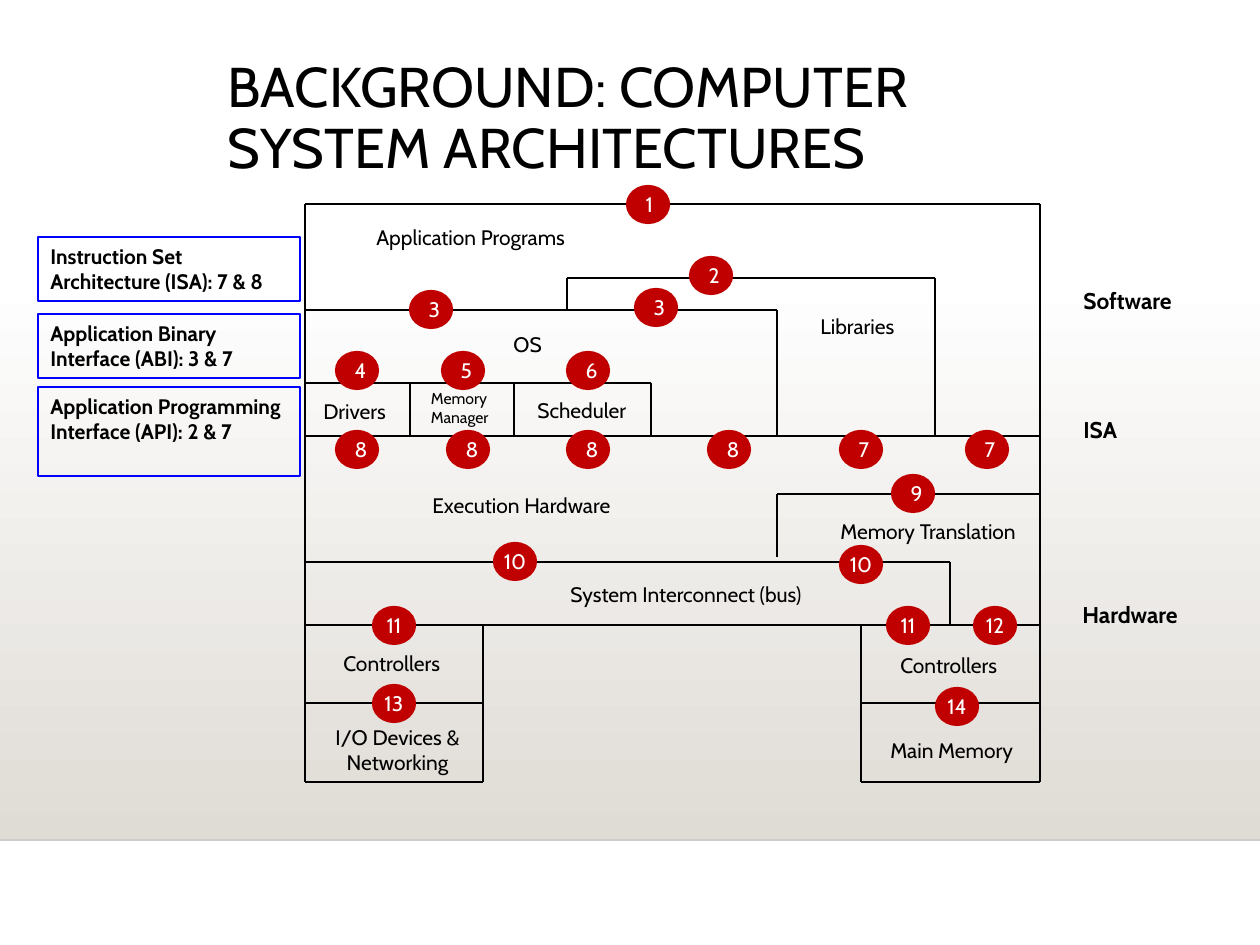
from lxml import etree
from pptx import Presentation
from pptx.dml.color import RGBColor
from pptx.enum.shapes import MSO_CONNECTOR as CONNECTOR, MSO_SHAPE as SHAPE
from pptx.enum.text import MSO_ANCHOR as ANCHOR, PP_ALIGN as ALIGN
from pptx.oxml.ns import qn
from pptx.util import Pt

SCALE = 914400 / 126
COLORS = {
    "black": "000000",
    "white": "FFFFFF",
    "sand": "DFDBD5",
    "floor": "CCCCCC",
    "red": "C00000",
    "blue": "0000FF",
}


def write(shape, text, size, color="black", bold=False, align=ALIGN.LEFT,
          anchor=ANCHOR.TOP, wrap=True):
    text_frame = shape.text_frame
    text_frame.text = text
    text_frame.word_wrap = wrap
    text_frame.vertical_anchor = anchor
    for paragraph in text_frame.paragraphs:
        paragraph.alignment = align
        for run in paragraph.runs:
            run.font.name = "Cabin"
            run.font.size = Pt(size)
            run.font.bold = bold
            run.font.color.rgb = RGBColor.from_string(COLORS[color])
    return text_frame


def draw_line(points, color="black", width=0.75):
    connector = slide.shapes.add_connector(
        CONNECTOR.STRAIGHT, *[round(value * SCALE) for value in points])
    connector.line.color.rgb = RGBColor.from_string(COLORS[color])
    connector.line.width = Pt(width)
    etree.SubElement(connector._element.spPr, qn("a:effectLst"))


presentation = Presentation()
presentation.slide_width = round(1260 * SCALE)
presentation.slide_height = round(945 * SCALE)
slide = presentation.slides.add_slide(presentation.slide_layouts[6])

backdrop = slide.shapes.add_shape(
    SHAPE.RECTANGLE, 0, round(277 * SCALE), round(1260 * SCALE), round(563 * SCALE))
backdrop.shadow.inherit = False
backdrop.line.fill.background()
backdrop.fill.gradient()
backdrop.fill.gradient_angle = 270
for stop, color in zip(backdrop.fill.gradient_stops, ("white", "sand")):
    stop.color.rgb = RGBColor.from_string(COLORS[color])
draw_line((0, 840, 1260, 840), "floor", 1)

title = slide.shapes.add_textbox(
    *[round(value * SCALE) for value in (215, 53, 906, 145)])
title_frame = write(title, "BACKGROUND: COMPUTER SYSTEM ARCHITECTURES", 32)
title_frame.paragraphs[0].line_spacing = 0.9

LEFT, RIGHT = 305, 1040
TOP, BOTTOM = 204, 782
ISA, BUS, DEVICES = 436, 625, 703
diagram_lines = [
    (LEFT, TOP, RIGHT, TOP),
    (LEFT, TOP, LEFT, BOTTOM),
    (RIGHT, TOP, RIGHT, BOTTOM),
    (LEFT, ISA, RIGHT, ISA),
    (LEFT, BUS, RIGHT, BUS),
    (LEFT, BOTTOM, 483, BOTTOM),
    (LEFT, DEVICES, 483, DEVICES),
    (483, BUS, 483, BOTTOM),
    (861, BOTTOM, RIGHT, BOTTOM),
    (861, DEVICES, RIGHT, DEVICES),
    (861, BUS, 861, BOTTOM),
    (LEFT, 562, 950, 562),
    (950, 562, 950, BUS),
    (777, 494, 777, 557),
    (777, 494, RIGHT, 494),
    (LEFT, 383, 651, 383),
    (651, 383, 651, ISA),
    (514, 383, 514, ISA),
    (410, 383, 410, ISA),
    (LEFT, 310, 777, 310),
    (777, 310, 777, ISA),
    (567, 278, 567, 310),
    (567, 278, 935, 278),
    (935, 278, 935, ISA),
]
for points in diagram_lines:
    draw_line(points)

markers = [
    (1, 627, 186), (2, 690, 257), (3, 410, 291), (3, 635, 289),
    (4, 336, 352), (5, 442, 352), (6, 567, 352),
    (7, 966, 431), (7, 840, 431),
    (8, 708, 431), (8, 567, 431), (8, 447, 431), (8, 336, 431),
    (9, 892, 475), (10, 494, 543), (10, 840, 546),
    (11, 373, 607), (11, 887, 607), (12, 974, 607),
    (13, 373, 685), (14, 936, 688),
]
for number, left, top in markers:
    marker = slide.shapes.add_shape(
        SHAPE.OVAL, *[round(value * SCALE) for value in (left, top, 42, 37)])
    marker.shadow.inherit = False
    marker.fill.solid()
    marker.fill.fore_color.rgb = RGBColor.from_string(COLORS["red"])
    marker.line.color.rgb = RGBColor.from_string(COLORS["red"])
    marker.line.width = Pt(1.25)
    marker_frame = write(marker, str(number), 12, "white",
                         align=ALIGN.CENTER, anchor=ANCHOR.MIDDLE)
    if number >= 10:
        marker_frame.margin_left = marker_frame.margin_right = 0
        marker_frame.margin_top = marker_frame.margin_bottom = 0

labels = [
    ("Drivers", 311, 392, 92),
    ("Application Programs", 364, 218, 227),
    ("Libraries", 808, 307, 106),
    ("OS", 501, 325, 57),
    ("Scheduler", 525, 391, 120),
    ("Execution Hardware", 420, 486, 215),
    ("System Interconnect (bus)", 558, 575, 272),
    ("Memory Translation", 828, 512, 212),
    ("Controllers", 331, 644, 127),
    ("Controllers", 888, 646, 127),
    ("I/O Devices &\nNetworking", 320, 718, 155),
    ("Main Memory", 878, 731, 154),
]
for text, left, top, width in labels:
    height = 64 if "\n" in text else 38
    label = slide.shapes.add_textbox(
        *[round(value * SCALE) for value in (left, top, width, height)])
    align = ALIGN.CENTER if "\n" in text else ALIGN.LEFT
    write(label, text, 12, align=align, wrap=False)

manager = slide.shapes.add_textbox(
    *[round(value * SCALE) for value in (431, 389, 63, 38)])
manager_frame = write(manager, "Memory\nManager", 9, wrap=False)
manager_frame.margin_left = manager_frame.margin_right = 0
manager_frame.margin_top = manager_frame.margin_bottom = 0

layers = [
    ("Software", 1071, 281, 122),
    ("ISA", 1071, 410, 64),
    ("Hardware", 1070, 595, 130),
]
for text, left, top, width in layers:
    layer = slide.shapes.add_textbox(
        *[round(value * SCALE) for value in (left, top, width, 40)])
    write(layer, text, 13, bold=True, wrap=False)

interfaces = [
    ("Instruction Set\nArchitecture (ISA): 7 & 8", 237, 64),
    ("Application Binary\nInterface (ABI): 3 & 7", 314, 64),
    ("Application Programming\nInterface (API): 2 & 7", 387, 89),
]
for text, top, height in interfaces:
    interface = slide.shapes.add_shape(
        SHAPE.RECTANGLE, *[round(value * SCALE) for value in (38, top, 262, height)])
    interface.shadow.inherit = False
    interface.fill.background()
    interface.line.color.rgb = RGBColor.from_string(COLORS["blue"])
    interface.line.width = Pt(1)
    write(interface, text, 12, bold=True)

presentation.save("out.pptx")
